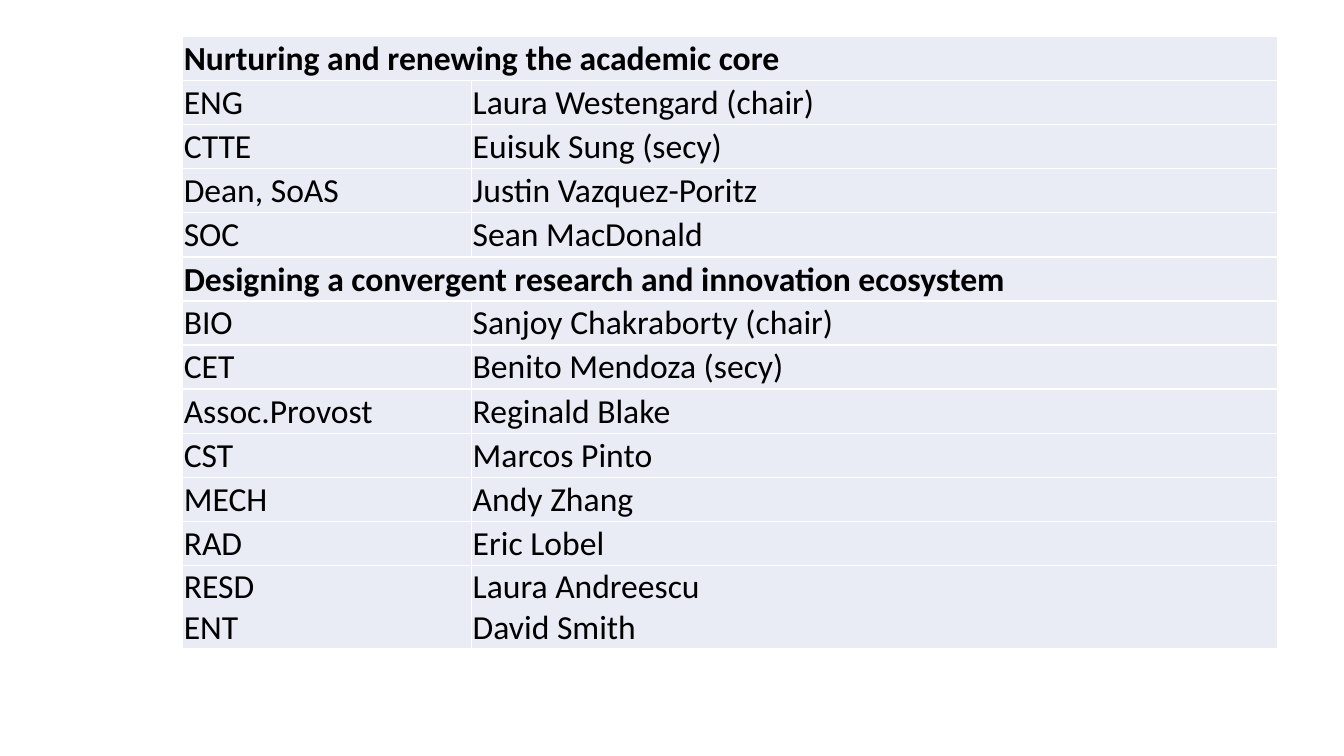
import dataclasses

import pptx
import pptx.dml.color
import pptx.enum.text
import pptx.oxml
import pptx.oxml.ns
import pptx.util

WIDTH = pptx.util.Inches(13.33)
HEIGHT = pptx.util.Inches(7.5)


@dataclasses.dataclass(frozen=True)
class Theme:
    font: str = "Calibri"
    size: int = 24
    ink: str = "000000"
    panel: str = "E9EBF5"
    border: str = "FFFFFF"
    border_width: int = 1


THEME = Theme()
ANCHOR = pptx.enum.text.MSO_ANCHOR

COMMITTEES = [
    ("Nurturing and renewing the academic core", ANCHOR.MIDDLE, [
        ("ENG", "Laura Westengard (chair)"),
        ("CTTE", "Euisuk Sung (secy)"),
        ("Dean, SoAS", "Justin Vazquez-Poritz"),
        ("SOC", "Sean MacDonald"),
    ]),
    ("Designing a convergent research and innovation ecosystem", ANCHOR.BOTTOM, [
        ("BIO", "Sanjoy Chakraborty (chair)"),
        ("CET", "Benito Mendoza (secy)"),
        ("Assoc.Provost", "Reginald Blake"),
        ("CST", "Marcos Pinto"),
        ("MECH", "Andy Zhang"),
        ("RAD", "Eric Lobel"),
        ("RESD\nENT", "Laura Andreescu\nDavid Smith"),
    ]),
]


def across(percent):
    return round(WIDTH * percent / 100)


def down(percent):
    return round(HEIGHT * percent / 100)


def add_borders(cell):
    properties = cell._tc.get_or_add_tcPr()
    namespace = pptx.oxml.ns.nsdecls("a")
    line_width = pptx.util.Pt(THEME.border_width)
    for index, side in enumerate(("lnL", "lnR", "lnT", "lnB")):
        properties.insert(index, pptx.oxml.parse_xml(
            f'<a:{side} {namespace} w="{line_width}"><a:solidFill>'
            f'<a:srgbClr val="{THEME.border}"/></a:solidFill></a:{side}>'
        ))


def style_cell(cell):
    cell.fill.solid()
    cell.fill.fore_color.rgb = pptx.dml.color.RGBColor.from_string(THEME.panel)
    cell.margin_left = cell.margin_right = cell.margin_top = pptx.util.Inches(0.01)
    cell.margin_bottom = 0
    add_borders(cell)


def write_cell(cell, text, bold=False, anchor=ANCHOR.MIDDLE):
    cell.text = text
    cell.vertical_anchor = anchor
    for paragraph in cell.text_frame.paragraphs:
        paragraph.font.name = THEME.font
        paragraph.font.size = pptx.util.Pt(THEME.size)
        paragraph.font.bold = bold
        paragraph.font.color.rgb = pptx.dml.color.RGBColor.from_string(THEME.ink)


def add_committee_table(slide, left, top, column_widths, row_height, last_height):
    row_count = sum(1 + len(members) for _, _, members in COMMITTEES)
    table = slide.shapes.add_table(
        row_count, len(column_widths), across(left), down(top),
        across(sum(column_widths)), down(row_height * (row_count - 1) + last_height),
    ).table
    table.first_row = False
    table.horz_banding = False
    for column, width in zip(table.columns, column_widths):
        column.width = across(width)
    for row in table.rows:
        row.height = down(row_height)
    table.rows[row_count - 1].height = down(last_height)
    for cell in table.iter_cells():
        style_cell(cell)

    row_index = 0
    for title, anchor, members in COMMITTEES:
        heading = table.cell(row_index, 0)
        heading.merge(table.cell(row_index, 1))
        write_cell(heading, title, bold=True, anchor=anchor)
        for row_index, member in enumerate(members, row_index + 1):
            for column_index, text in enumerate(member):
                write_cell(table.cell(row_index, column_index), text)
        row_index += 1


def main():
    presentation = pptx.Presentation()
    presentation.slide_width = WIDTH
    presentation.slide_height = HEIGHT
    slide = presentation.slides.add_slide(presentation.slide_layouts[6])
    add_committee_table(
        slide, left=13.6, top=4.85, column_widths=(21.5, 59.95),
        row_height=5.83, last_height=10.67,
    )
    presentation.save("out.pptx")


if __name__ == "__main__":
    main()
